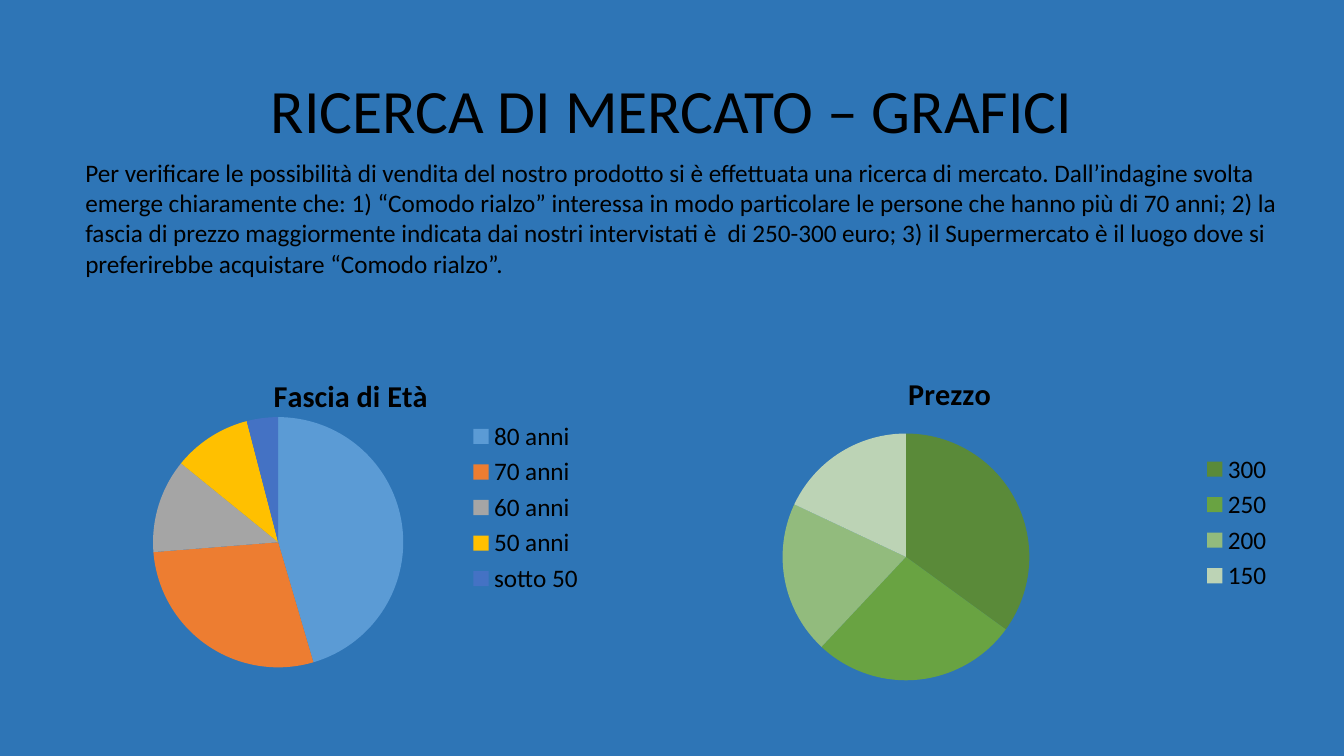
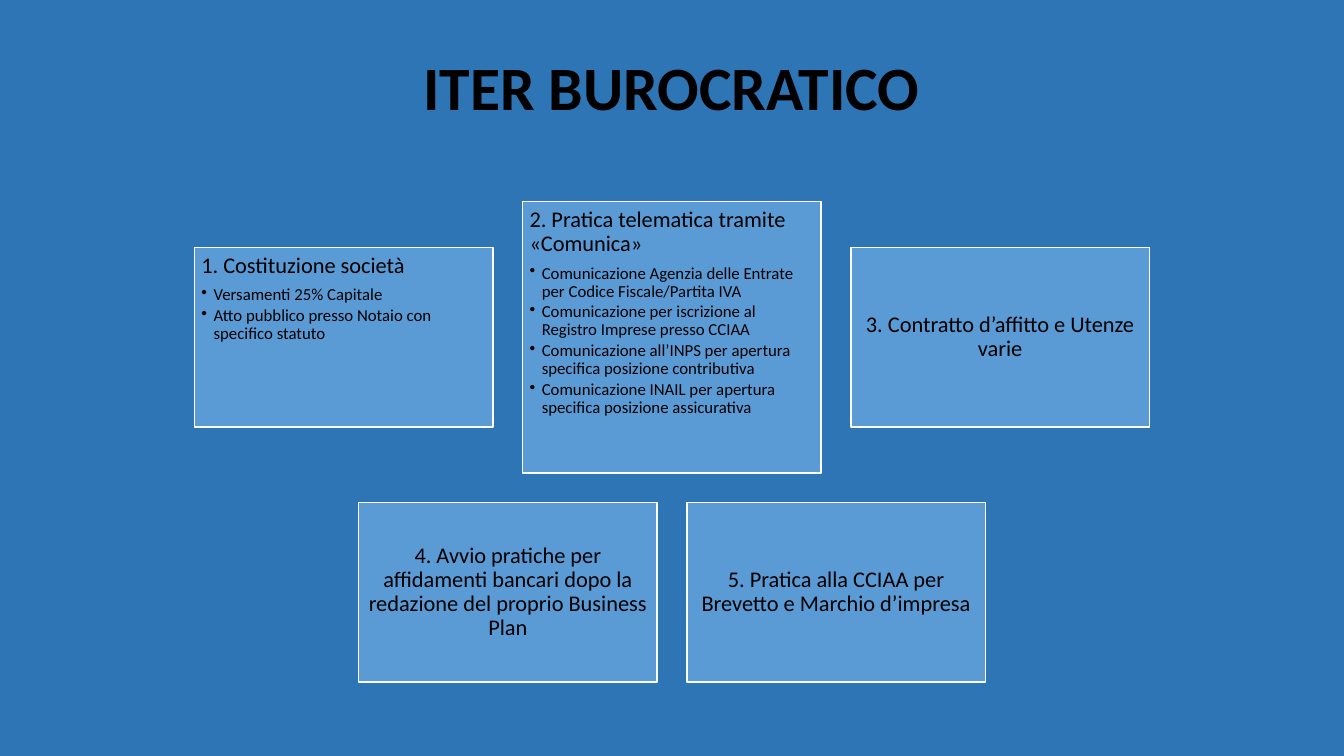
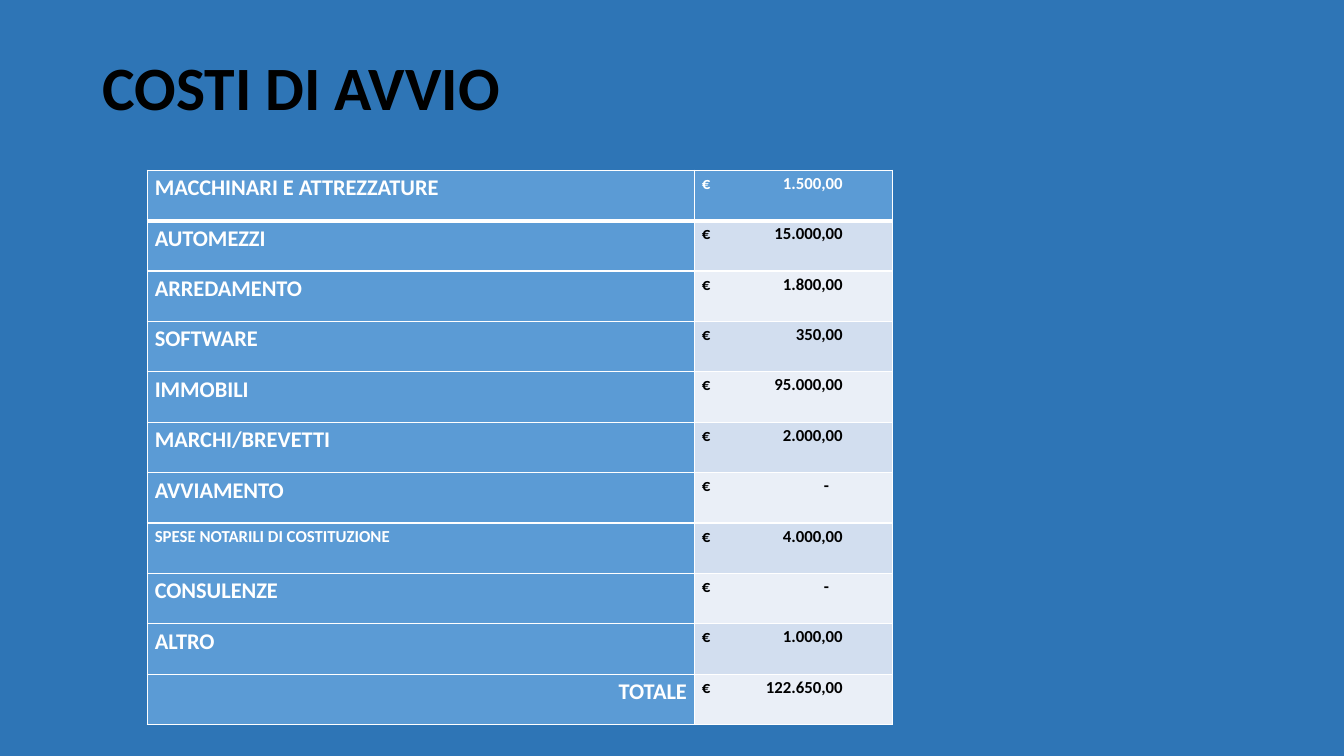
from lxml import etree
from pptx import Presentation
from pptx.chart.data import CategoryChartData
from pptx.dml.color import RGBColor
from pptx.enum.chart import XL_CHART_TYPE, XL_LEGEND_POSITION
from pptx.enum.shapes import MSO_SHAPE
from pptx.enum.text import MSO_ANCHOR, PP_ALIGN
from pptx.oxml.ns import qn
from pptx.util import Cm, Pt

PIE = XL_CHART_TYPE.PIE
LEGEND_RIGHT = XL_LEGEND_POSITION.RIGHT
RECT = MSO_SHAPE.RECTANGLE
TOP, MIDDLE = MSO_ANCHOR.TOP, MSO_ANCHOR.MIDDLE
LEFT, CENTER, RIGHT = PP_ALIGN.LEFT, PP_ALIGN.CENTER, PP_ALIGN.RIGHT

FONT = "Calibri"
SLIDE_W, SLIDE_H = 33.87, 19.05
COLORS = {
    "background": "2E75B6",
    "text": "000000",
    "white": "FFFFFF",
    "accent": "5B9BD5",
    "band_dark": "D2DEEF",
    "band_light": "EAEFF7",
}
AGE_COLORS = ["5B9BD5", "ED7D31", "A5A5A5", "FFC000", "4472C4"]
PRICE_COLORS = ["5A8A39", "69A342", "92BB7D", "BCD3B5"]

INTRO = (
    "Per verificare le possibilità di vendita del nostro prodotto si è effettuata "
    "una ricerca di mercato. Dall’indagine svolta emerge chiaramente che: "
    "1) “Comodo rialzo” interessa in modo particolare le persone che hanno più di "
    "70 anni; 2) la fascia di prezzo maggiormente indicata dai nostri intervistati è  "
    "di 250-300 euro; 3) il Supermercato è il luogo dove si preferirebbe acquistare "
    "“Comodo rialzo”."
)
AGES = {"80 anni": 45, "70 anni": 28, "60 anni": 12, "50 anni": 10, "sotto 50": 4}
PRICES = {"300": 35, "250": 27, "200": 20, "150": 18}

# Rows of steps: heading, bullets, box height
STEP_ROWS = [
    [
        ("1. Costituzione società",
         ["Versamenti 25% Capitale",
          "Atto pubblico presso Notaio con specifico statuto"], 4.52),
        ("2. Pratica telematica tramite «Comunica»",
         ["Comunicazione Agenzia delle Entrate per Codice Fiscale/Partita IVA",
          "Comunicazione per iscrizione al Registro Imprese presso CCIAA",
          "Comunicazione all’INPS per apertura specifica posizione contributiva",
          "Comunicazione INAIL per apertura specifica posizione assicurativa"], 6.84),
        ("3. Contratto d’affitto e Utenze varie", [], 4.52),
    ],
    [
        ("4. Avvio pratiche per affidamenti bancari dopo la redazione del proprio "
         "Business Plan", [], 4.52),
        ("5. Pratica alla CCIAA per Brevetto e Marchio d’impresa", [], 4.52),
    ],
]
COSTS = [
    ("MACCHINARI E ATTREZZATURE", "1.500,00"),
    ("AUTOMEZZI", "15.000,00"),
    ("ARREDAMENTO", "1.800,00"),
    ("SOFTWARE", "350,00"),
    ("IMMOBILI", "95.000,00"),
    ("MARCHI/BREVETTI", "2.000,00"),
    ("AVVIAMENTO", "-"),
    ("SPESE NOTARILI DI COSTITUZIONE", "4.000,00"),
    ("CONSULENZE", "-"),
    ("ALTRO", "1.000,00"),
    ("TOTALE", "122.650,00"),
]


def rgb(name):
    return RGBColor.from_string(COLORS.get(name, name))


def style_font(font, size, color="text", bold=False):
    font.name, font.size, font.bold = FONT, Pt(size), bold
    font.color.rgb = rgb(color)


def add_run(p, text, size, color="text", bold=False):
    r = p.add_run()
    r.text = text
    style_font(r.font, size, color, bold)


def new_slide(prs):
    s = prs.slides.add_slide(prs.slide_layouts[6])
    s.background.fill.solid()
    s.background.fill.fore_color.rgb = rgb("background")
    return s


def add_text(s, box, text, size, bold=False, align=LEFT, anchor=TOP, spacing=1.0):
    tf = s.shapes.add_textbox(*map(Cm, box)).text_frame
    tf.word_wrap = True
    tf.vertical_anchor = anchor
    p = tf.paragraphs[0]
    p.alignment, p.line_spacing = align, spacing
    add_run(p, text, size, bold=bold)


def add_title(s, text, height=2.51, bold=True, align=CENTER):
    add_text(s, (2.33, 1.02, 29.21, height), text, 44, bold, align, MIDDLE, 0.9)


# Charts
def set_layout(parent, index, inner=False, **fractions):
    """Place a chart part at fractions (x, y, w, h) of the chart area."""
    for old in parent.findall(qn("c:layout")):
        parent.remove(old)
    layout = etree.Element(qn("c:layout"))
    manual = etree.SubElement(layout, qn("c:manualLayout"))
    values = [("layoutTarget", "inner")] if inner else []
    values += [("xMode", "edge"), ("yMode", "edge")]
    values += [(key, str(value)) for key, value in fractions.items()]
    for tag, value in values:
        etree.SubElement(manual, qn("c:" + tag)).set("val", value)
    parent.insert(index, layout)


def add_pie(s, box, title, shares, colors, title_at, plot_at):
    data = CategoryChartData()
    data.categories = list(shares)
    data.add_series(title, list(shares.values()))
    chart = s.shapes.add_chart(PIE, *map(Cm, box), data).chart
    style_font(chart.font, 18)

    chart.has_title = True
    p = chart.chart_title.text_frame.paragraphs[0]
    add_run(p, title, 21.6, bold=True)
    set_layout(chart.chart_title._element, 1, x=title_at[0], y=title_at[1])

    chart.has_legend = True
    chart.legend.position = LEGEND_RIGHT
    chart.legend.include_in_layout = False

    plot = chart.plots[0]
    plot.vary_by_categories = True
    set_layout(plot._element.getparent(), 0, inner=True, **dict(zip("xywh", plot_at)))
    for i, color in enumerate(colors):
        fill = plot.series[0].points[i].format.fill
        fill.solid()
        fill.fore_color.rgb = rgb(color)


# Step boxes
def add_step(s, box, heading, bullets):
    sp = s.shapes.add_shape(RECT, *map(Cm, box))
    sp.shadow.inherit = False
    sp.fill.solid()
    sp.fill.fore_color.rgb = rgb("accent")
    sp.line.color.rgb = rgb("white")
    sp.line.width = Pt(1)
    tf = sp.text_frame
    tf.word_wrap = True
    tf.margin_left = tf.margin_right = tf.margin_top = tf.margin_bottom = Cm(0.17)
    tf.vertical_anchor = TOP if bullets else MIDDLE

    p = tf.paragraphs[0]
    p.alignment = LEFT if bullets else CENTER
    p.line_spacing, p.space_after = 0.9, Pt(5.6)
    add_run(p, heading, 16)
    for text in bullets:
        p = tf.add_paragraph()
        p.alignment = LEFT
        p.line_spacing, p.space_after = 0.9, Pt(1.8)
        add_run(p, text, 12)
        pPr = p._p.get_or_add_pPr()
        pPr.set("marL", str(Cm(0.31)))
        pPr.set("indent", str(-Cm(0.31)))
        etree.SubElement(pPr, qn("a:buChar")).set("char", "•")


def add_step_rows(s, top, rows, width=7.52, gap=0.75):
    for row in rows:
        row_h = max(height for _, _, height in row)
        left = (SLIDE_W - len(row) * width - (len(row) - 1) * gap) / 2
        for i, (heading, bullets, height) in enumerate(row):
            box = (left + i * (width + gap), top + (row_h - height) / 2, width, height)
            add_step(s, box, heading, bullets)
        top += row_h + gap


# Cost table
def set_borders(cell, top, bottom):
    tcPr = cell._tc.get_or_add_tcPr()
    for i, (side, width) in enumerate(zip("LRTB", (1, 1, top, bottom))):
        ln = etree.Element(qn("a:ln" + side), w=str(Pt(width)))
        fill = etree.SubElement(ln, qn("a:solidFill"))
        etree.SubElement(fill, qn("a:srgbClr")).set("val", COLORS["white"])
        tcPr.insert(i, ln)


def add_tab(p, position):
    tabs = etree.SubElement(p._p.get_or_add_pPr(), qn("a:tabLst"))
    etree.SubElement(tabs, qn("a:tab"), pos=str(Cm(position)), algn="r")


def fill_cell(cell, row, text, size, color, fill, align=LEFT):
    cell.margin_left = cell.margin_right = Cm(0.19)
    cell.margin_top = cell.margin_bottom = 0
    cell.fill.solid()
    cell.fill.fore_color.rgb = rgb(fill)
    set_borders(cell, 3 if row == 1 else 1, 3 if row == 0 else 1)
    p = cell.text_frame.paragraphs[0]
    p.alignment, p.line_spacing = align, 1.15
    add_run(p, text, size, color, True)
    return p


def add_cost_table(s, left, top, costs, widths=(13.79, 5.0), row_h=1.27):
    table = s.shapes.add_table(len(costs), 2, Cm(left), Cm(top), Cm(sum(widths)),
                               Cm(row_h * len(costs))).table
    for column, width in zip(table.columns, widths):
        column.width = Cm(width)
    for i, (label, amount) in enumerate(costs):
        table.rows[i].height = Cm(row_h)
        fill_cell(table.cell(i, 0), i, label, 12 if label.startswith("SPESE") else 16,
                  "white", "accent", RIGHT if label == "TOTALE" else LEFT)
        band = "band_dark" if i % 2 else "band_light"
        p = fill_cell(table.cell(i, 1), i, "€\t" + amount, 12,
                      "text" if i else "white", band if i else "accent")
        add_tab(p, 3.2 if amount == "-" else 3.55)


# Slides
def research_slide(prs):
    s = new_slide(prs)
    add_title(s, "RICERCA DI MERCATO – GRAFICI", height=3.68, bold=False)
    add_pie(s, (2.33, 8.41, 12.65, 8.76), "Fascia di Età", AGES, AGE_COLORS,
            (0.35, 0.1), (0.12, 0.24, 0.5, 0.72))
    add_pie(s, (15.52, 8.81, 16.81, 8.71), "Prezzo", PRICES, PRICE_COLORS,
            (0.43, 0.05), (0.25, 0.24, 0.37, 0.72))
    add_text(s, (1.9, 3.84, 31.19, 3.33), INTRO, 18)


def procedure_slide(prs):
    s = new_slide(prs)
    add_title(s, "ITER BUROCRATICO")
    add_step_rows(s, 5.08, STEP_ROWS)


def costs_slide(prs):
    s = new_slide(prs)
    add_title(s, "COSTI DI AVVIO", align=LEFT)
    add_cost_table(s, 3.71, 4.29, COSTS)


def main():
    prs = Presentation()
    prs.slide_width, prs.slide_height = Cm(SLIDE_W), Cm(SLIDE_H)
    research_slide(prs)
    procedure_slide(prs)
    costs_slide(prs)
    prs.save("out.pptx")


if __name__ == "__main__":
    main()
